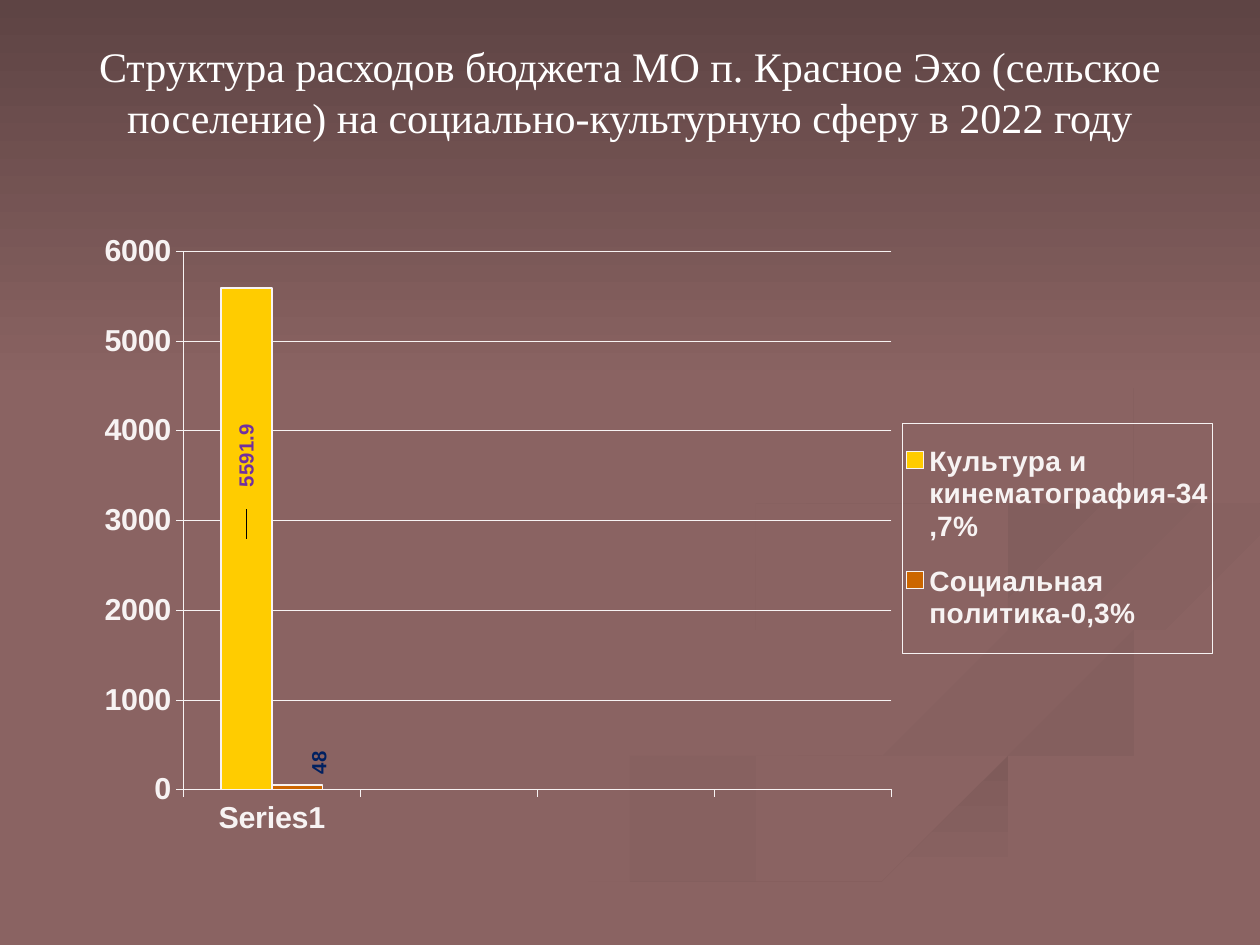
from lxml import etree
from pptx import Presentation
from pptx import util as u
from pptx.chart.data import CategoryChartData
from pptx.dml.color import RGBColor
from pptx.enum import chart as ch
from pptx.enum import shapes, text
from pptx.oxml.ns import qn

BASE, PALE = "8A6362", "F7F3F3"

# Ribbons from back to front: colours, angle, and the two edges as curve knots in inches
RIBBONS = [
    (BASE, "845F5E", 0,
     [(5.75, 4.59), (6.14, 4.96), (7.7, 5.5), (8, 5.81), (7.21, 6.23), (5.32, 6.74), (3.61, 7.49)],
     [(3, 7.49), (4.58, 6.74), (7.14, 6.05), (7.86, 5.66), (7.14, 5.3), (5.86, 4.87), (5.7, 4.7)]),
    (BASE, "845F5E", 45,
     [(7.24, 4.64), (7.58, 4.98), (9.05, 5.4), (9.43, 5.7), (8.94, 6.05)],
     [(8.94, 6.05), (9.18, 5.81), (8.68, 5.44), (7.55, 5.05), (7.24, 4.64)]),
    ("7F5B5A", BASE, 90,
     [(5.03, 7.49), (6.3, 6.93), (8.31, 6.29), (9.98, 5.81)],
     [(9.98, 6.09), (7.85, 6.61), (5.71, 7.49)]),
    ("825E5D", BASE, 45,
     [(7.81, 4.6), (8.21, 4.34), (9.98, 4.02)],
     [(9.98, 4.2), (8.43, 4.48), (8.05, 4.72), (8.26, 4.96), (7.81, 4.6)]),
    ("805C5B", BASE, 45,
     [(7.62, 2.33), (8.64, 2.91), (8.89, 3.62), (7.86, 4.12), (6.35, 4.4), (5.93, 4.7), (6.22, 5)],
     [(6.22, 5), (5.77, 4.62), (6.25, 4.26), (8.18, 3.86), (8.89, 3.35), (8.46, 2.79), (7.62, 2.33)]),
]

# Series: name, value, fill, label colour, label position, label shift
SERIES = [
    ("Культура и кинематография-34,7%", 5591.9, "FFCC00", "7030A0",
     ch.XL_LABEL_POSITION.CENTER, (0, -0.14)),
    ("Социальная политика-0,3%", 48, "CC6600", "002060",
     ch.XL_LABEL_POSITION.OUTSIDE_END, (0.02, -0.01)),
]


def colour(value):
    return RGBColor.from_string(value)


def style_font(font, size, value, name="Arial", bold=True):
    font.size, font.name, font.bold = u.Pt(size), name, bold
    font.color.rgb = colour(value)


def style_line(line, width):
    line.color.rgb = colour(PALE)
    line.width = u.Pt(width)


def paint(shape, first, second, angle):
    """Fill with a gradient turned clockwise by angle."""
    shape.shadow.inherit = False
    shape.line.fill.background()
    shape.fill.gradient()
    shape.fill.gradient_angle = -angle % 360
    for stop, value in zip(shape.fill.gradient_stops, (first, second)):
        stop.color.rgb = colour(value)


def smooth(knots, steps=6):
    """Run a Catmull-Rom curve through the knots."""
    padded = [knots[0], *knots, knots[-1]]
    curve = [knots[0]]
    for span in zip(padded, padded[1:], padded[2:], padded[3:]):
        for step in range(1, steps + 1):
            t = step / steps
            curve.append(tuple(
                b + t * (c - a + t * (2 * a - 5 * b + 4 * c - d
                                      + t * (3 * (b - c) + d - a))) / 2
                for a, b, c, d in zip(*span)))
    return curve


def add_ribbon(slide, first, second, angle, edge, return_edge):
    points = smooth(edge) + smooth(return_edge)
    builder = slide.shapes.build_freeform(*points[0], scale=u.Inches(1))
    builder.add_line_segments(points[1:], close=True)
    paint(builder.convert_to_shape(), first, second, angle)


def place(parent, index, **settings):
    """Insert a manual layout into a chart part."""
    for old in parent.findall(qn("c:layout")):
        parent.remove(old)
    layout = etree.Element(qn("c:layout"))
    manual = etree.SubElement(layout, qn("c:manualLayout"))
    for tag, value in settings.items():
        etree.SubElement(manual, qn(f"c:{tag}")).set("val", str(value))
    parent.insert(index, layout)


def add_title(slide, wording):
    title = slide.shapes.title
    title.left, title.top, title.width, title.height = map(u.Inches, (0.5, 0.3, 9, 1.25))
    frame = title.text_frame
    frame.text = wording
    frame.word_wrap = True
    frame.vertical_anchor = text.MSO_ANCHOR.MIDDLE
    frame.margin_bottom = u.Inches(0.45)
    para = frame.paragraphs[0]
    para.alignment = text.PP_ALIGN.CENTER
    style_font(para.runs[0].font, 24, "FFFFFF", "Times New Roman", False)
    # Bring the title in front of the background shapes
    title.element.getparent().append(title.element)


def style_axes(chart):
    for axis in (chart.category_axis, chart.value_axis):
        style_font(axis.tick_labels.font, 17.6, PALE)
        style_line(axis.format.line, 0.25)
        axis.major_tick_mark = ch.XL_TICK_MARK.OUTSIDE
    chart.category_axis.tick_label_position = ch.XL_TICK_LABEL_POSITION.LOW
    values = chart.value_axis
    values.minimum_scale, values.maximum_scale, values.major_unit = 0, 6000, 1000
    style_line(values.major_gridlines.format.line, 0.25)


def style_columns(chart):
    plot = chart.plots[0]
    plot.gap_width, plot.overlap, plot.vary_by_categories = 150, 0, False
    for series, (_, _, fill, label_colour, position, _) in zip(plot.series, SERIES):
        series.format.fill.solid()
        series.format.fill.fore_color.rgb = colour(fill)
        style_line(series.format.line, 0.98)
        label = series.points[0].data_label
        style_font(label.font, 11.8, label_colour)
        label.position = position
    # Upright labels, moved off their default places
    for label, (*_, shift) in zip(chart.element.xpath(".//c:dLbl"), SERIES):
        label.find(f".//{qn('a:bodyPr')}").set("rot", "-5400000")
        place(label, 1, x=shift[0], y=shift[1])


def add_legend(chart):
    chart.has_legend = True
    legend = chart.legend
    legend.position = ch.XL_LEGEND_POSITION.RIGHT
    legend.include_in_layout = False
    style_font(legend.font, 16.2, PALE)
    part = chart.element.find(f".//{qn('c:legend')}")
    place(part, 1, xMode="edge", yMode="edge", x=0.71, y=0.31, w=0.28, h=0.39)
    # Border
    frame = etree.Element(qn("c:spPr"))
    border = etree.SubElement(frame, qn("a:ln"), w=str(u.Pt(0.25)))
    fill = etree.SubElement(border, qn("a:solidFill"))
    etree.SubElement(fill, qn("a:srgbClr"), val=PALE)
    part.find(qn("c:txPr")).addprevious(frame)


def add_spending_chart(slide):
    data = CategoryChartData()
    data.categories = ["Series1", "", "", ""]
    for name, value, *_ in SERIES:
        data.add_series(name, [value, None, None, None])
    chart = slide.shapes.add_chart(ch.XL_CHART_TYPE.COLUMN_CLUSTERED,
                                   *map(u.Inches, (0.83, 1.86, 8.88, 4.77)), data).chart
    chart.has_title = False
    style_font(chart.font, 17.6, PALE)
    style_axes(chart)
    style_columns(chart)
    add_legend(chart)
    place(chart.element.find(f".//{qn('c:plotArea')}"), 0, layoutTarget="inner",
          xMode="edge", yMode="edge", x=0.06, y=0.02, w=0.64, h=0.91)


def main():
    deck = Presentation()
    deck.slide_width, deck.slide_height = u.Inches(10), u.Inches(7.5)
    slide = deck.slides.add_slide(deck.slide_layouts[5])

    # Background
    slide.background.fill.solid()
    slide.background.fill.fore_color.rgb = colour(BASE)
    for ribbon in RIBBONS:
        add_ribbon(slide, *ribbon)
    band = slide.shapes.add_shape(shapes.MSO_SHAPE.RECTANGLE, 0, 0, u.Inches(10), u.Inches(3.08))
    paint(band, "5E4444", BASE, 90)

    # Content
    add_title(slide, "Структура расходов бюджета МО п. Красное Эхо (сельское поселение) "
                     "на социально-культурную сферу в 2022 году")
    add_spending_chart(slide)
    deck.save("out.pptx")


if __name__ == "__main__":
    main()
